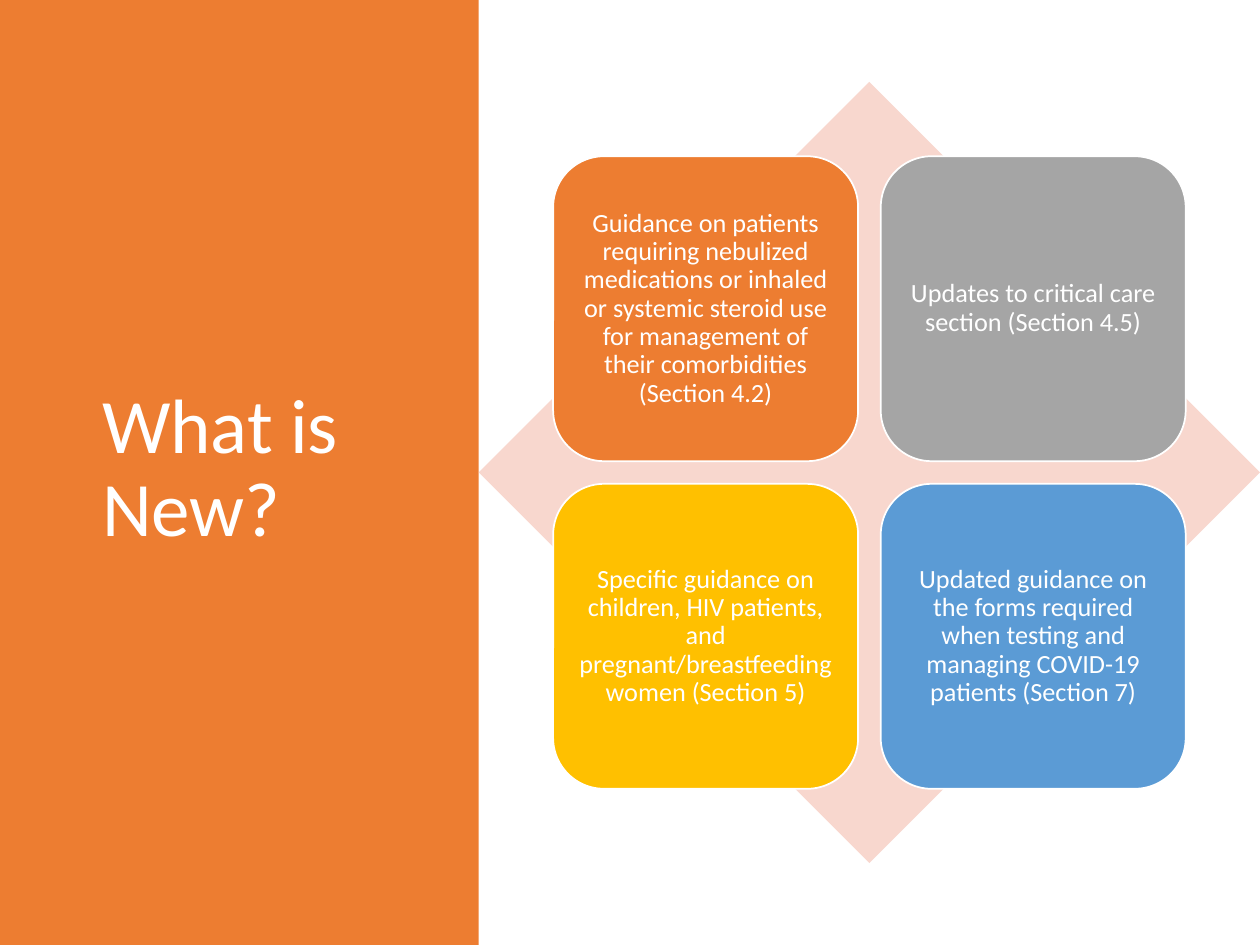
from pptx import Presentation
from pptx.dml.color import RGBColor
from pptx.enum import shapes, text
from pptx.util import Inches, Pt

FONT = "Calibri"
WHITE = "FFFFFF"
ORANGE = "ED7D31"
UPDATES = [
    ("Guidance on patients requiring nebulized medications or inhaled or systemic "
     "steroid use for management of their comorbidities (Section 4.2)", ORANGE),
    ("Updates to critical care section (Section 4.5)", "A5A5A5"),
    ("Specific guidance on children, HIV patients, and pregnant/breastfeeding "
     "women (Section 5)", "FFC000"),
    ("Updated guidance on the forms required when testing and managing COVID-19 "
     "patients (Section 7)", "5B9BD5"),
]
CARD_SIZE = 2.42
CARD_STEP = 2.6
CARDS_LEFT, CARDS_TOP = 4.39, 1.24


def color(hex_value):
    return RGBColor.from_string(hex_value)


def add_block(slide, preset, left, top, width, height, fill):
    block = slide.shapes.add_shape(
        preset, Inches(left), Inches(top), Inches(width), Inches(height))
    block.shadow.inherit = False
    block.fill.solid()
    block.fill.fore_color.rgb = color(fill)
    block.line.fill.background()
    return block


def write(frame, words, size, alignment):
    frame.text = words
    frame.word_wrap = True
    frame.auto_size = text.MSO_AUTO_SIZE.NONE
    frame.vertical_anchor = text.MSO_ANCHOR.MIDDLE
    paragraph = frame.paragraphs[0]
    paragraph.alignment = alignment
    paragraph.line_spacing = 0.9
    paragraph.font.name = FONT
    paragraph.font.size = Pt(size)
    paragraph.font.color.rgb = color(WHITE)


def add_title(slide, words):
    title = slide.shapes.title
    title.left, title.top = Inches(0.71), Inches(1.11)
    title.width, title.height = Inches(2.8), Inches(5.24)
    write(title.text_frame, words, 44, text.PP_ALIGN.LEFT)


def add_side_panel(slide):
    """Add the coloured panel behind the title."""
    panel = add_block(slide, shapes.MSO_SHAPE.RECTANGLE, 0, 0, 3.8, 7.5, ORANGE)
    title_element = slide.shapes.title.element
    title_element.addprevious(panel.element)


def add_card(slide, left, top, words, fill):
    card = add_block(slide, shapes.MSO_SHAPE.ROUNDED_RECTANGLE,
                     left, top, CARD_SIZE, CARD_SIZE, fill)
    card.line.color.rgb = color(WHITE)
    card.line.width = Pt(1)
    frame = card.text_frame
    frame.margin_left = frame.margin_right = Inches(0.06)
    frame.margin_top = frame.margin_bottom = Inches(0.06)
    write(frame, words, 15, text.PP_ALIGN.CENTER)


def main():
    deck = Presentation()
    deck.slide_width, deck.slide_height = Inches(10), Inches(7.5)
    slide = deck.slides.add_slide(deck.slide_layouts[5])

    add_title(slide, "What is New?")
    add_side_panel(slide)
    add_block(slide, shapes.MSO_SHAPE.DIAMOND, 3.8, 0.65, 6.2, 6.2, "F8D7CE")
    for index, (words, fill) in enumerate(UPDATES):
        row, column = divmod(index, 2)
        add_card(slide, CARDS_LEFT + column * CARD_STEP,
                 CARDS_TOP + row * CARD_STEP, words, fill)

    deck.save("out.pptx")


if __name__ == "__main__":
    main()
